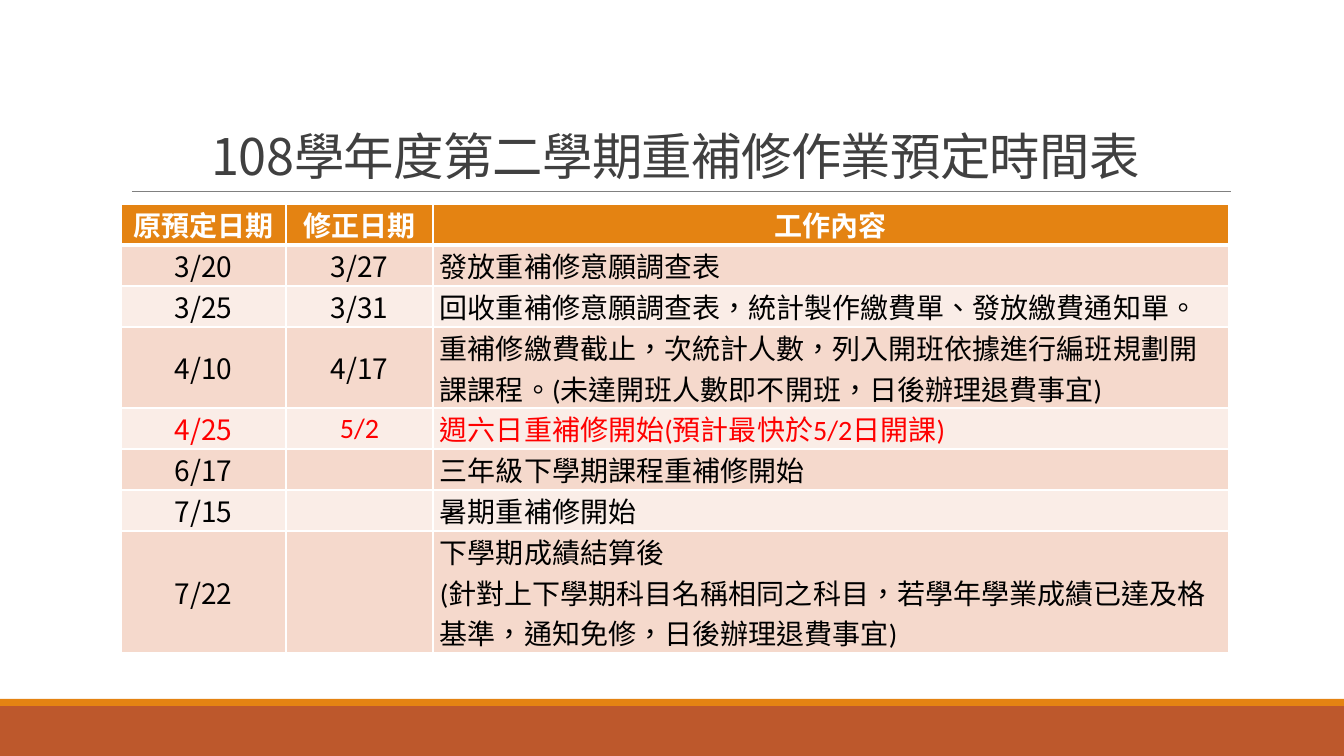
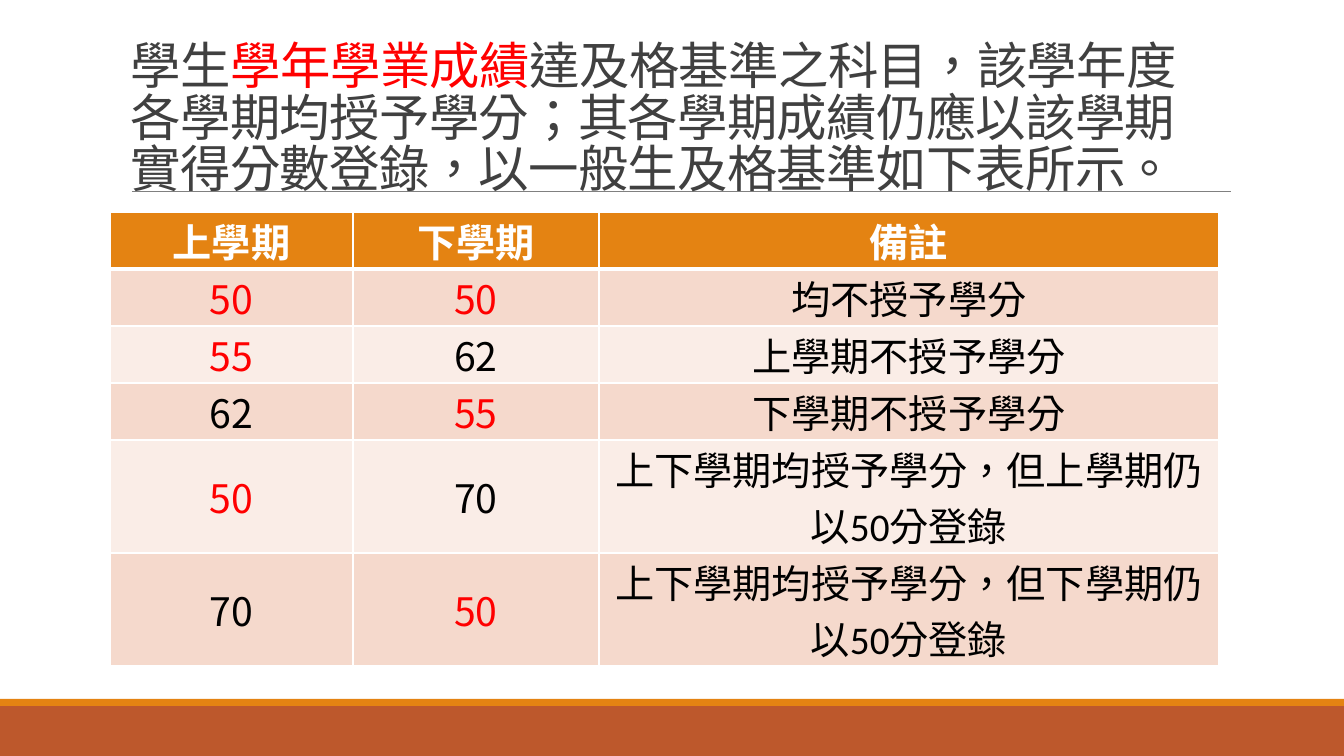
from lxml import etree
from pptx import Presentation
from pptx.dml.color import RGBColor
from pptx.enum.lang import MSO_LANGUAGE_ID
from pptx.enum.shapes import MSO_CONNECTOR, MSO_SHAPE
from pptx.enum.text import MSO_ANCHOR, PP_ALIGN
from pptx.oxml.ns import qn
from pptx.util import Pt

PX = 9071  # EMU per px
WIDTH, HEIGHT = 1344, 756
LEFT, CENTER = PP_ALIGN.LEFT, PP_ALIGN.CENTER
MIDDLE, BOTTOM = MSO_ANCHOR.MIDDLE, MSO_ANCHOR.BOTTOM
RECTANGLE, STRAIGHT = MSO_SHAPE.RECTANGLE, MSO_CONNECTOR.STRAIGHT
CHINESE = MSO_LANGUAGE_ID.TRADITIONAL_CHINESE

CALIBRI, NOTO = "Calibri", "Noto Sans CJK SC"
ORANGE, RUST, GRAY, DARK = "E48312", "BD582C", "808080", "404040"
RED, BLACK, WHITE = "FF0000", "000000", "FFFFFF"
ROW_FILLS = ["FAEDE7", "F5D9CC"]
BANDS = [(706, 50, RUST), (699, 7, ORANGE)]  # top, height, colour

SLIDES = [
    {
        "title": [("108學年度第二學期重補修作業預定時間表", DARK)],
        "title_align": CENTER,
        "title_height": 160,
        "table_at": (121, 204),
        "columns": [165, 147, 796],
        "row_heights": [41, 41, 41, 81, 41, 41, 41, 122],
        "size": 20,
        "last_column_align": LEFT,
        "red": {"4/25", "5/2", "週六日重補修開始(預計最快於5/2日開課)"},
        "rows": [
            ("原預定日期", "修正日期", "工作內容"),
            ("3/20", "3/27", "發放重補修意願調查表"),
            ("3/25", "3/31", "回收重補修意願調查表，統計製作繳費單、發放繳費通知單。"),
            ("4/10", "4/17", "重補修繳費截止，次統計人數，列入開班依據進行編班規劃開課課程。"
                             "(未達開班人數即不開班，日後辦理退費事宜)"),
            ("4/25", "5/2", "週六日重補修開始(預計最快於5/2日開課)"),
            ("6/17", "", "三年級下學期課程重補修開始"),
            ("7/15", "", "暑期重補修開始"),
            ("7/22", "", "下學期成績結算後\n(針對上下學期科目名稱相同之科目，"
                         "若學年學業成績已達及格基準，通知免修，日後辦理退費事宜)"),
        ],
    },
    {
        "title": [
            ("學生", DARK),
            ("學年學業成績", RED),
            ("達及格基準之科目，該學年度各學期均授予學分；其各學期成績仍應以"
             "該學期實得分數登錄，以一般生及格基準如下表所示。", DARK),
        ],
        "title_align": LEFT,
        "title_height": 172,
        "table_at": (110, 212),
        "columns": [243, 246, 620],
        "row_heights": [57, 57, 57, 57, 113, 113],
        "size": 28,
        "last_column_align": CENTER,
        "red": {"50", "55"},
        "rows": [
            ("上學期", "下學期", "備註"),
            ("50", "50", "均不授予學分"),
            ("55", "62", "上學期不授予學分"),
            ("62", "55", "下學期不授予學分"),
            ("50", "70", "上下學期均授予學分，但上學期仍以50分登錄"),
            ("70", "50", "上下學期均授予學分，但下學期仍以50分登錄"),
        ],
    },
]


def rgb(hex_colour):
    return RGBColor.from_string(hex_colour)


def style_run(run, size, latin, colour, bold=False):
    """Format a run, with Noto for its Chinese characters."""
    font = run.font
    font.size, font.bold, font.name = Pt(size), bold, latin
    font.color.rgb = rgb(colour)
    font.language_id = CHINESE
    etree.SubElement(run._r.get_or_add_rPr(), qn("a:ea"), typeface=NOTO)


deck = Presentation()
deck.slide_width, deck.slide_height = WIDTH * PX, HEIGHT * PX

for content in SLIDES:
    slide = deck.slides.add_slide(deck.slide_layouts[6])
    shapes = slide.shapes

    # Bands and title rule
    for top, height, colour in BANDS:
        band = shapes.add_shape(RECTANGLE, 0, top * PX, WIDTH * PX, height * PX)
        band.shadow.inherit = False
        band.fill.solid()
        band.fill.fore_color.rgb = rgb(colour)
        band.line.fill.background()
    rule = shapes.add_connector(STRAIGHT, 132 * PX, 191 * PX, 1231 * PX, 191 * PX)
    rule.line.color.rgb = rgb(GRAY)
    rule.line.width = Pt(0.5)
    etree.SubElement(rule._element.spPr, qn("a:effectLst"))

    # Title
    title = shapes.add_textbox(121 * PX, 31 * PX, 1109 * PX, content["title_height"] * PX)
    title.text_frame.word_wrap = True
    title.text_frame.vertical_anchor = BOTTOM
    heading = title.text_frame.paragraphs[0]
    heading.alignment = content["title_align"]
    heading.line_spacing = 0.85
    for text, colour in content["title"]:
        run = heading.add_run()
        run.text = text
        style_run(run, 36, NOTO, colour)
        run._r.rPr.set("spc", "-50")

    # Table
    rows, columns, heights = content["rows"], content["columns"], content["row_heights"]
    left, top = content["table_at"]
    table = shapes.add_table(len(rows), len(columns), left * PX, top * PX,
                             sum(columns) * PX, sum(heights) * PX).table
    for column, width in zip(table.columns, columns):
        column.width = width * PX
    for row, height in zip(table.rows, heights):
        row.height = height * PX

    for r, texts in enumerate(rows):
        is_header = r == 0
        for c, text in enumerate(texts):
            is_last = c == len(columns) - 1
            cell = table.cell(r, c)
            cell.margin_left = cell.margin_right = 7 * PX
            cell.margin_top = cell.margin_bottom = 0
            cell.vertical_anchor = MIDDLE

            # Borders come before the fill in the cell's XML
            top_width, bottom_width = 3 if r == 1 else 1, 3 if is_header else 1
            for side, points in (("L", 1), ("R", 1), ("T", top_width), ("B", bottom_width)):
                border = etree.SubElement(cell._tc.get_or_add_tcPr(), qn("a:ln" + side),
                                          w=str(Pt(points)))
                border_fill = etree.SubElement(border, qn("a:solidFill"))
                etree.SubElement(border_fill, qn("a:srgbClr"), val=WHITE)
            cell.fill.solid()
            cell.fill.fore_color.rgb = rgb(ORANGE if is_header else ROW_FILLS[r % 2])

            if is_header:
                colour = WHITE
            else:
                colour = RED if text in content["red"] else BLACK
            latin = CALIBRI if is_header or is_last or text == "5/2" else NOTO
            cell.text_frame.text = text
            for paragraph in cell.text_frame.paragraphs:
                paragraph.alignment = (content["last_column_align"]
                                       if is_last and not is_header else CENTER)
                for run in paragraph.runs:
                    style_run(run, content["size"], latin, colour, is_header)

deck.save("out.pptx")
